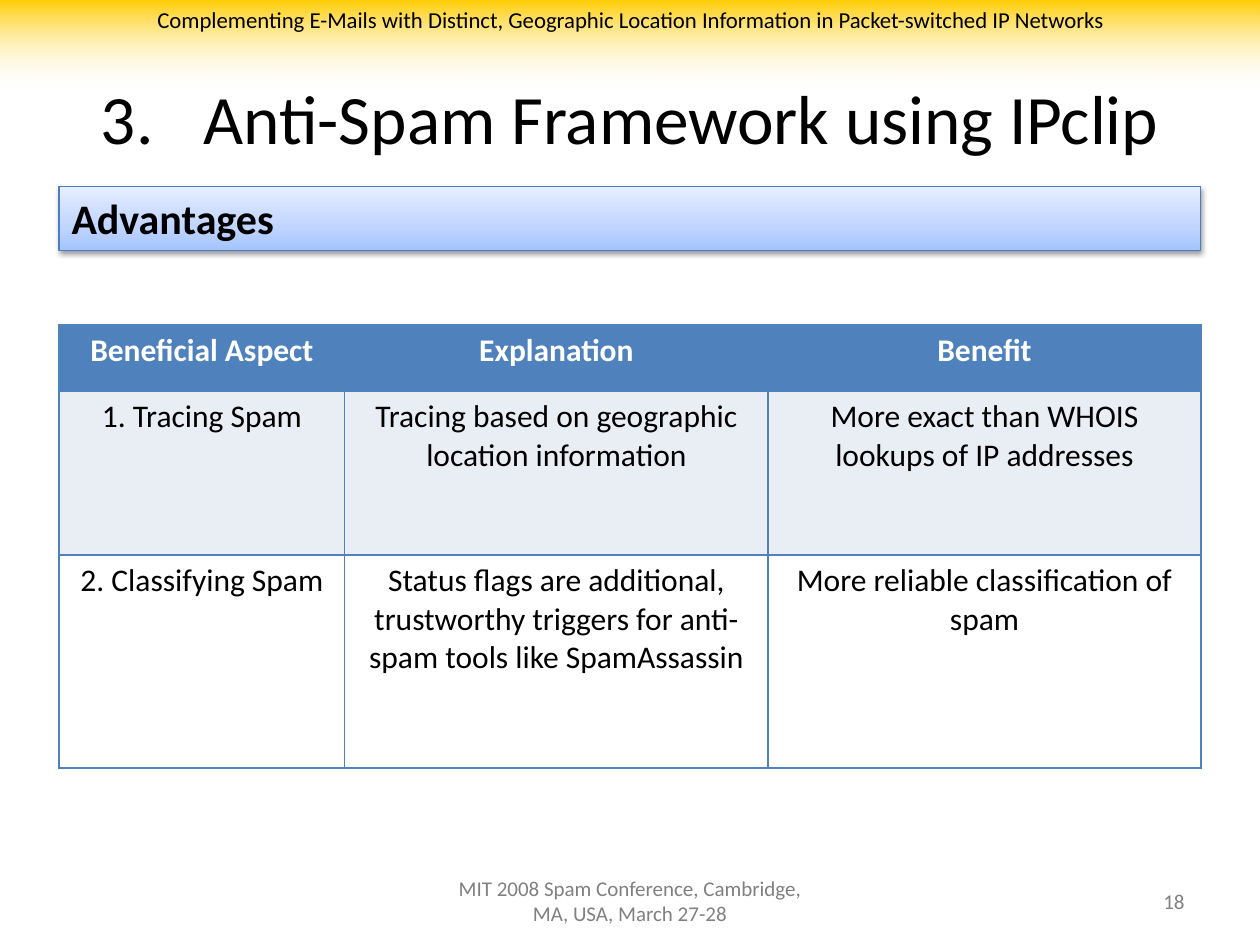
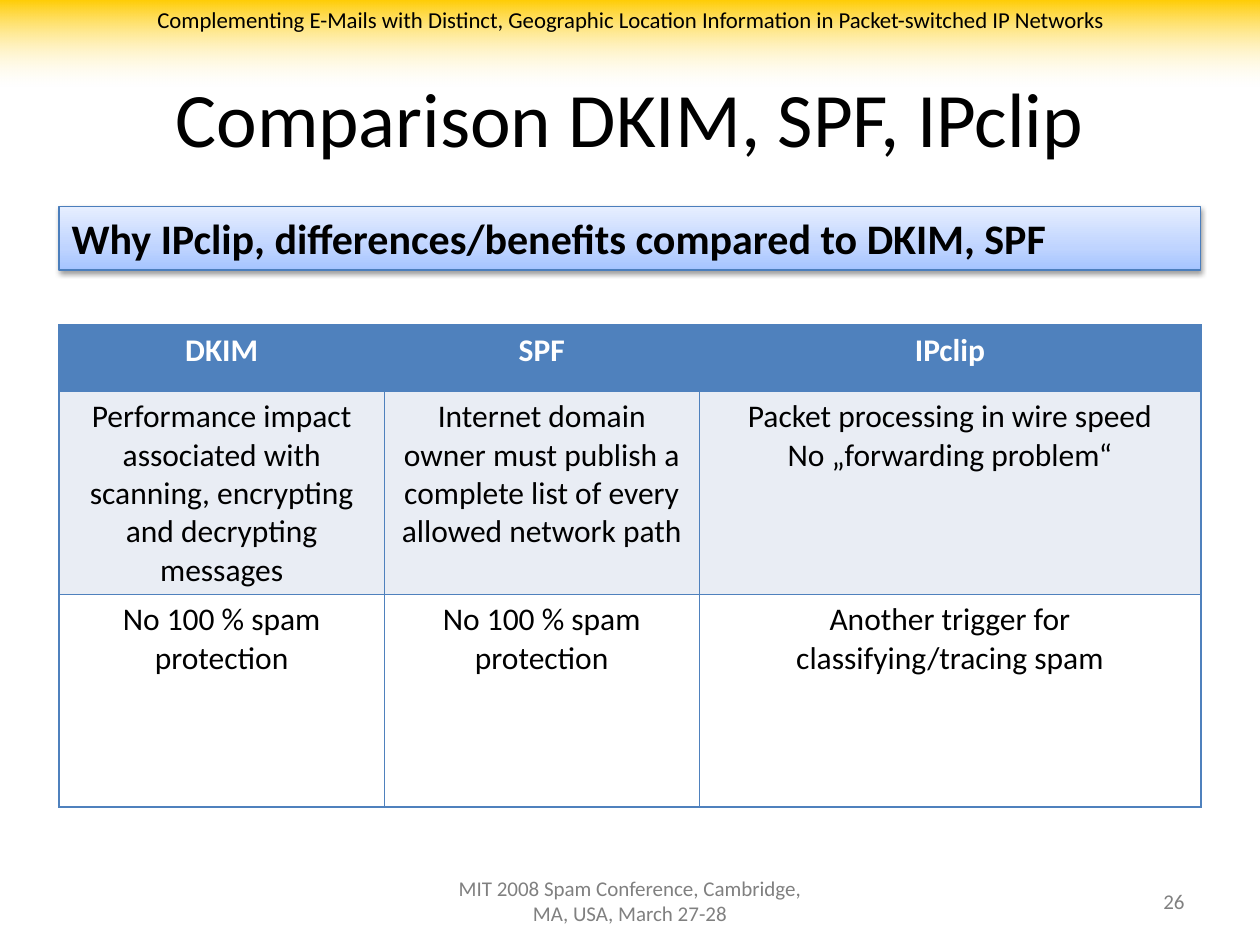
from lxml import etree
from pptx import Presentation
from pptx.dml.color import RGBColor
from pptx.enum.dml import MSO_LINE
from pptx.enum.shapes import MSO_SHAPE
from pptx.enum.text import MSO_ANCHOR, PP_ALIGN
from pptx.oxml import parse_xml
from pptx.oxml.ns import qn
from pptx.util import Pt

RECT = MSO_SHAPE.RECTANGLE
SOLID = MSO_LINE.SOLID
TOP, MIDDLE = MSO_ANCHOR.TOP, MSO_ANCHOR.MIDDLE
LEFT, CENTER, RIGHT = PP_ALIGN.LEFT, PP_ALIGN.CENTER, PP_ALIGN.RIGHT
NS = 'xmlns:a="http://schemas.openxmlformats.org/drawingml/2006/main"'

THEME = {
    "font": "Calibri",
    "ink": "000000",
    "grey": "808080",
    "white": "FFFFFF",
    "blue": "4F81BD",
    "edge": "4B7EBC",
    "pale": "E9EDF4",
    "band": [(0, "FFCC00", 100), (100, "FFFFFF", 15)],
    "bar": [(0, "A4C4FF", 100), (35, "BFD4FF", 100), (100, "E6EEFF", 100)],
    "sizes": {"band": 13, "foot": 12, "bar": 24, "cell": 18},
}
SIZES = THEME["sizes"]
SIDE, WIDE = 33.8, 652.4
HEADER = ("Complementing E-Mails with Distinct, Geographic Location "
          "Information in Packet-switched IP Networks")
FOOTER = "MIT 2008 Spam Conference, Cambridge, MA, USA, March 27-28"

SLIDES = [
    {
        "title": "Anti-Spam Framework using IPclip", "size": 39.6, "start": 3,
        "page": "18", "bar": "Advantages", "top": 106.6,
        "cols": [163.2, 242, 247.2], "rows": [37.8, 93.7, 121.7],
        "cells": [
            ["Beneficial Aspect", "Explanation", "Benefit"],
            ["1. Tracing Spam",
             "Tracing based on geographic location information",
             "More exact than WHOIS lookups of IP addresses"],
            ["2. Classifying Spam",
             "Status flags are additional, trustworthy triggers for "
             "anti-spam tools like SpamAssassin",
             "More reliable classification of spam"],
        ],
    },
    {
        "title": "Comparison DKIM, SPF, IPclip", "size": 44, "start": None,
        "page": "26", "bar": "Why IPclip, differences/benefits compared to DKIM, SPF",
        "top": 118, "cols": [185.8, 180, 286.6], "rows": [37.8, 116, 121.7],
        "cells": [
            ["DKIM", "SPF", "IPclip"],
            ["Performance impact associated with scanning, encrypting and "
             "decrypting messages",
             "Internet domain owner must publish a complete list of every "
             "allowed network path",
             "Packet processing in wire speed\nNo „forwarding problem“"],
            ["No 100 % spam protection", "No 100 % spam protection",
             "Another trigger for classifying/tracing spam"],
        ],
    },
]


def write(frame, text, size, color="ink", align=CENTER, anchor=TOP, bold=False, start=None):
    frame.word_wrap = True
    frame.vertical_anchor = anchor
    frame.text = text
    style = {"name": THEME["font"], "size": Pt(size), "bold": bold}
    for para in frame.paragraphs:
        para.alignment = align
        if start:
            props = para._p.get_or_add_pPr()
            props.set("marL", str(Pt(58.5)))
            props.set("indent", str(-Pt(58.5)))
            etree.SubElement(props, qn("a:buAutoNum"), type="arabicPeriod", startAt=str(start))
        for run in para.runs:
            for key, value in style.items():
                setattr(run.font, key, value)
            run.font.color.rgb = RGBColor.from_string(THEME[color])


def panel(slide, area, stops, angle):
    shape = slide.shapes.add_shape(RECT, *map(Pt, area))
    shape.shadow.inherit = False
    shape.line.fill.background()
    marks = "".join(
        f'<a:gs pos="{pos * 1000}"><a:srgbClr val="{color}">'
        f'<a:alpha val="{alpha * 1000}"/></a:srgbClr></a:gs>'
        for pos, color, alpha in stops)
    shape._element.spPr.insert(2, parse_xml(
        f'<a:gradFill {NS} rotWithShape="1"><a:gsLst>{marks}</a:gsLst>'
        f'<a:lin ang="{angle * 60000}" scaled="0"/></a:gradFill>'))
    return shape


deck = Presentation()
deck.slide_width, deck.slide_height = Pt(720), Pt(540)

for data in SLIDES:
    slide = deck.slides.add_slide(deck.slide_layouts[6])
    band = panel(slide, (0, 0, 720, 49.7), THEME["band"], 90)
    write(band.text_frame, HEADER, SIZES["band"])

    labels = [
        ((36, 21.6, 648, 90), data["title"],
         {"size": data["size"], "start": data["start"]}),
        ((246, 500.4, 228, 28.8), FOOTER,
         {"size": SIZES["foot"], "color": "grey"}),
        ((516, 500.4, 168, 28.8), data["page"],
         {"size": SIZES["foot"], "color": "grey", "align": RIGHT}),
    ]
    for area, text, style in labels:
        box = slide.shapes.add_textbox(*map(Pt, area))
        write(box.text_frame, text, anchor=MIDDLE, **style)

    bar = panel(slide, (SIDE, data["top"], WIDE, 36.4), THEME["bar"], 270)
    bar.line.color.rgb = RGBColor.from_string(THEME["edge"])
    bar.line.width = Pt(0.75)
    bar.line.dash_style = SOLID
    bar._element.spPr.find(qn("a:effectLst")).append(parse_xml(
        f'<a:outerShdw {NS} blurRad="{Pt(3.1)}" dist="{Pt(1.6)}" dir="5400000" '
        'rotWithShape="0"><a:srgbClr val="000000"><a:alpha val="38000"/>'
        '</a:srgbClr></a:outerShdw>'))
    write(bar.text_frame, data["bar"], SIZES["bar"], align=LEFT, bold=True)

    cols, rows = data["cols"], data["rows"]
    grid = slide.shapes.add_table(
        len(rows), len(cols), Pt(SIDE), Pt(185.8), Pt(WIDE), Pt(sum(rows))).table
    grid.horz_banding = False
    for col, width in zip(grid.columns, cols):
        col.width = Pt(width)
    for row, height in zip(grid.rows, rows):
        row.height = Pt(height)
    looks = [("blue", "white", True), ("pale", "ink", False), ("white", "ink", False)]
    for row, texts, (fill, color, bold) in zip(grid.rows, data["cells"], looks):
        for cell, text in zip(row.cells, texts):
            write(cell.text_frame, text, SIZES["cell"], color, bold=bold)
            props = cell._tc.get_or_add_tcPr()
            for edge in ("lnL", "lnR", "lnT", "lnB"):
                props.append(parse_xml(
                    f'<a:{edge} {NS} w="{Pt(1)}"><a:solidFill>'
                    f'<a:srgbClr val="{THEME["blue"]}"/></a:solidFill></a:{edge}>'))
            cell.fill.solid()
            cell.fill.fore_color.rgb = RGBColor.from_string(THEME[fill])

deck.save("out.pptx")
